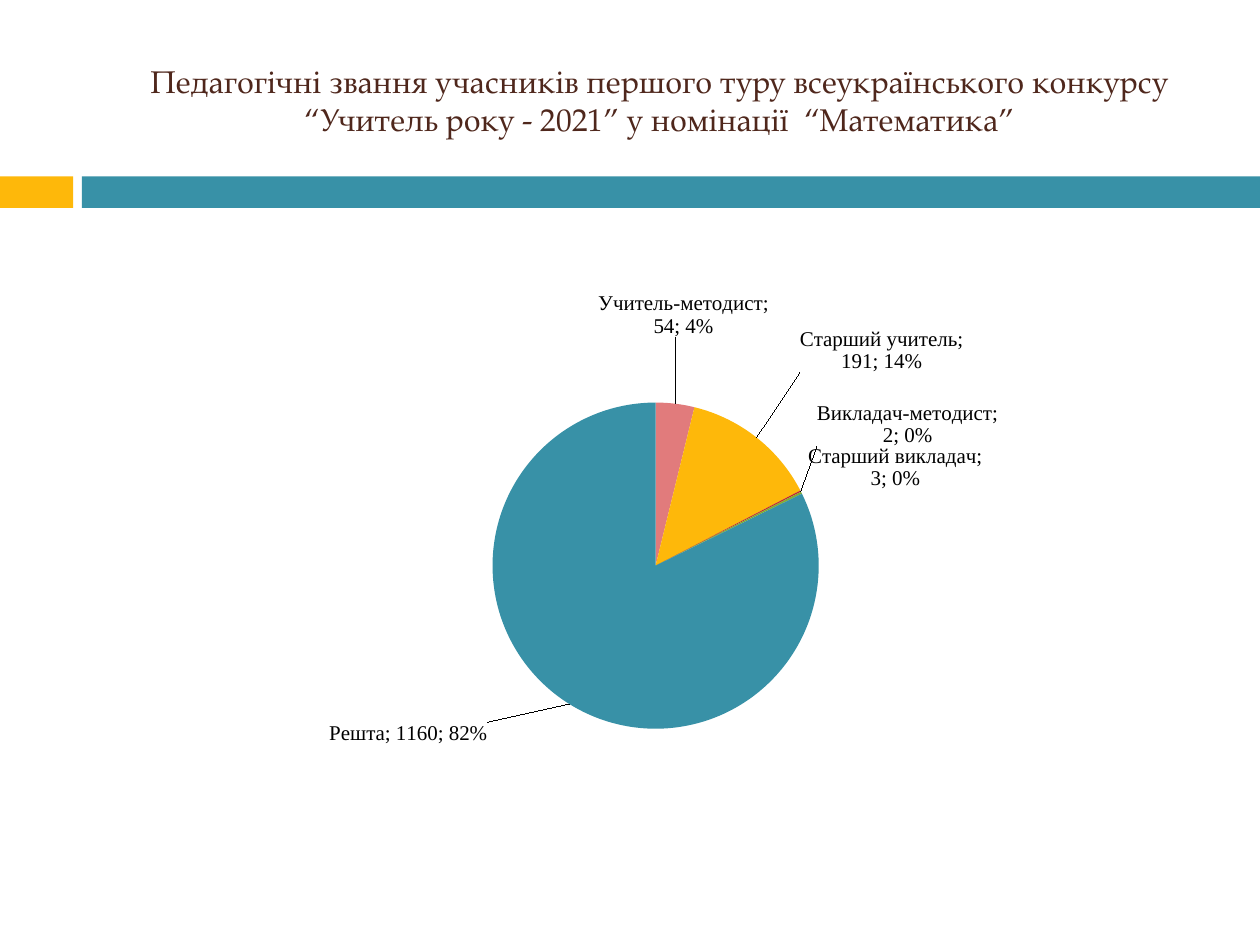
from lxml import etree
from pptx import Presentation
from pptx.chart.data import CategoryChartData as Data
from pptx.dml.color import RGBColor
from pptx.enum.chart import XL_CHART_TYPE as Kind, XL_LABEL_POSITION as Pos
from pptx.enum.shapes import MSO_SHAPE as Shape
from pptx.enum.text import MSO_ANCHOR as Anchor, PP_ALIGN as Align
from pptx.oxml.ns import qn
from pptx.util import Inches, Pt

TEAL, GOLD, BROWN = "3891A7", "FEB80A", "4F271C"
TITLE = ("Педагогічні звання учасників першого туру всеукраїнського конкурсу "
         "“Учитель року - 2021” у номінації  “Математика”")
# rank, count, colour, label shift as a share of the chart
RANKS = [
    ("Учитель-методист", 54, "E17B7C", (-0.08, -0.1)),
    ("Старший учитель", 191, GOLD, (0.04, -0.1)),
    ("Викладач-методист", 2, "C32D2E", (0.01, -0.07)),
    ("Старший викладач", 3, "84AA33", None),
    ("Решта", 1160, TEAL, (-0.08, 0.02)),
]


def color(code):
    return RGBColor.from_string(code)


def style(font, name, size, code):
    font.name, font.size = name, Pt(size)
    font.color.rgb = color(code)


def add_text(slide, box, text, font="Calibri", size=18, code="000000",
             align=Align.LEFT, anchor=Anchor.TOP):
    frame = slide.shapes.add_textbox(*map(Inches, box)).text_frame
    frame.word_wrap = True
    frame.vertical_anchor = anchor
    par = frame.paragraphs[0]
    par.alignment = align
    run = par.add_run()
    run.text = text
    style(run.font, font, size, code)


def add_band(slide, box, split=0.58, gap=0.07):
    left, top, width, height = box
    start = split + gap
    for x, w, code in ((0, split, GOLD), (start, width - start, TEAL)):
        bar = slide.shapes.add_shape(
            Shape.RECTANGLE, *map(Inches, (left + x, top, w, height)))
        bar.shadow.inherit = False
        bar.fill.solid()
        bar.fill.fore_color.rgb = color(code)
        bar.line.fill.background()


def set_layout(node, **values):
    """Fill a chart layout node with a manual layout."""
    for old in list(node):
        node.remove(old)
    manual = etree.SubElement(node, qn("c:manualLayout"))
    for key, value in values.items():
        etree.SubElement(manual, qn(f"c:{key}")).set("val", str(value))


def show_parts(node):
    """Show category, value and percentage, split by semicolons."""
    for key in ("showVal", "showCatName", "showPercent"):
        node.find(qn(f"c:{key}")).set("val", "1")
    mark = etree.Element(qn("c:separator"))
    mark.text = "; "
    node.find(qn("c:showBubbleSize")).addnext(mark)


def move_label(label, series, index, shift):
    label.position = Pos.OUTSIDE_END
    style(label.font, "Times New Roman", 12, "000000")
    node = series.data_labels._element.xpath(
        f"c:dLbl[c:idx/@val='{index}']")[0]
    show_parts(node)
    layout = etree.Element(qn("c:layout"))
    node.find(qn("c:idx")).addnext(layout)
    set_layout(layout, x=shift[0], y=shift[1])


def add_pie(slide, box):
    data = Data()
    data.categories = [rank[0] for rank in RANKS]
    data.add_series("Series 1", [rank[1] for rank in RANKS])
    chart = slide.shapes.add_chart(
        Kind.PIE, *map(Inches, box), data).chart
    chart.has_legend = chart.has_title = False
    style(chart.font, "Calibri", 10, "000000")
    plot = chart.plots[0]
    plot.vary_by_categories = True
    area = chart._chartSpace.chart.plotArea
    layout = area.find(qn("c:layout"))
    if layout is None:
        layout = etree.Element(qn("c:layout"))
        area.insert(0, layout)
    set_layout(layout, layoutTarget="inner", xMode="edge", yMode="edge",
               x=0.228, y=0.231, w=0.567, h=0.551)

    series = plot.series[0]
    labels = series.data_labels
    style(labels.font, "Times New Roman", 12, "000000")
    labels.position = Pos.OUTSIDE_END
    show_parts(labels._element)
    for index, (_, _, code, shift) in enumerate(RANKS):
        point = series.points[index]
        point.format.fill.solid()
        point.format.fill.fore_color.rgb = color(code)
        point.format.line.fill.background()
        if shift:
            move_label(point.data_label, series, index, shift)


def main():
    deck = Presentation()
    deck.slide_width, deck.slide_height = Inches(10), Inches(7.5)
    slide = deck.slides.add_slide(deck.slide_layouts[6])
    add_band(slide, (0, 1.4, 10, 0.25))
    add_text(slide, (0.67, 0.25, 9.13, 1.08), TITLE,
             font="TeX Gyre Pagella", code=BROWN,
             align=Align.CENTER, anchor=Anchor.MIDDLE)
    add_pie(slide, (1.25, 2.11, 7.73, 4.7))
    deck.save("out.pptx")


if __name__ == "__main__":
    main()
